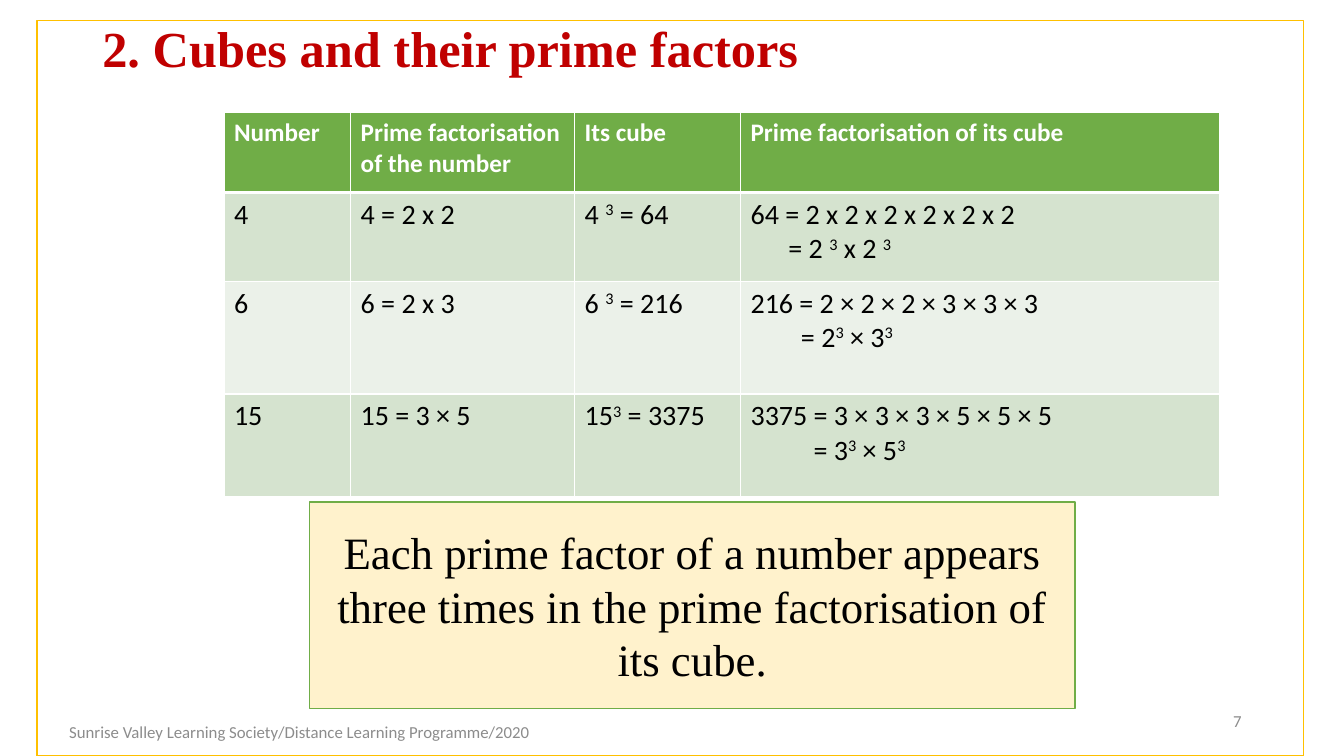
from pptx import Presentation
from pptx.dml.color import RGBColor
from pptx.enum.shapes import MSO_SHAPE
from pptx.enum.text import MSO_ANCHOR, PP_ALIGN
from pptx.oxml import parse_xml
from pptx.oxml.ns import nsdecls
from pptx.util import Pt

PROCESS = MSO_SHAPE.FLOWCHART_PROCESS
MIDDLE = MSO_ANCHOR.MIDDLE
LEFT, CENTER, RIGHT = PP_ALIGN.LEFT, PP_ALIGN.CENTER, PP_ALIGN.RIGHT

WHITE = RGBColor(0xFF, 0xFF, 0xFF)
BLACK = RGBColor(0, 0, 0)
RED = RGBColor(0xC0, 0, 0)
GOLD = RGBColor(0xFF, 0xC0, 0)
CREAM = RGBColor(0xFF, 0xF2, 0xCC)
GREEN = RGBColor(0x70, 0xAD, 0x47)
BANDS = RGBColor(0xD5, 0xE3, 0xCF), RGBColor(0xEB, 0xF1, 0xE9)
GRAY = RGBColor(0x8C, 0x8C, 0x8C)
SERIF, SANS = "Times New Roman", "Calibri"

# Content: "^" raises the next character, "\n" starts an indented line
TITLE = "2. Cubes and their prime factors"
HEADER = ("Number", "Prime factorisation of the number", "Its cube",
          "Prime factorisation of its cube")
ROWS = [
    ("4", "4 = 2 x 2", "4 ^3 = 64",
     "64 = 2 x 2 x 2 x 2 x 2 x 2\n= 2 ^3 x 2 ^3"),
    ("6", "6 = 2 x 3", "6 ^3 = 216",
     "216 = 2 × 2 × 2 × 3 × 3 × 3\n= 2^3 × 3^3"),
    ("15", "15 = 3 × 5", "15^3 = 3375",
     "3375 = 3 × 3 × 3 × 5 × 5 × 5\n= 3^3 × 5^3"),
]
INDENTS = (27, 36, 45)
COLUMN_WIDTHS = (90.5, 160, 118.5, 342)
ROW_HEIGHTS = (57, 63.5, 80.5, 73)
CONCLUSION = ("Each prime factor of a number appears three times "
              "in the prime factorisation of its cube.")
FOOTER = "Sunrise Valley Learning Society/Distance Learning Programme/2020"
PAGE_NUMBER = "7"

presentation = Presentation()
presentation.slide_width, presentation.slide_height = Pt(960), Pt(540)
slide = presentation.slides.add_slide(presentation.slide_layouts[6])


def style(paragraph, font_name, size, color, bold=False, align=LEFT):
    font = paragraph.font
    font.name, font.size, font.bold = font_name, Pt(size), bold
    font.color.rgb = color
    paragraph.alignment = align


def write(shape, text, *look):
    frame = shape.text_frame
    frame.word_wrap = True
    frame.vertical_anchor = MIDDLE
    frame.text = text
    style(frame.paragraphs[0], *look)


def add_box(box, fill, line):
    shape = slide.shapes.add_shape(PROCESS, *map(Pt, box))
    shape.shadow.inherit = False
    shape.fill.solid()
    shape.fill.fore_color.rgb = fill
    shape.line.color.rgb = line
    shape.line.width = Pt(1)
    return shape


def add_label(box, *text_and_look):
    write(slide.shapes.add_textbox(*map(Pt, box)), *text_and_look)


def add_powers(paragraph, text):
    first, *rest = text.split("^")
    paragraph.add_run().text = first
    for part in rest:
        power = paragraph.add_run()
        power.text = part[0]
        power._r.get_or_add_rPr().set("baseline", "30000")
        if part[1:]:
            paragraph.add_run().text = part[1:]


def format_cell(cell, fill, top, bottom):
    properties = cell._tc.get_or_add_tcPr()
    for side, width in zip("LRTB", (1, 1, top, bottom)):
        properties.append(parse_xml(
            f'<a:ln{side} {nsdecls("a")} w="{Pt(width)}"><a:solidFill>'
            f'<a:srgbClr val="{WHITE}"/></a:solidFill></a:ln{side}>'))
    cell.fill.solid()
    cell.fill.fore_color.rgb = fill


# Frame and title
add_box((26.5, 14.5, 904.5, 525.5), WHITE, GOLD)
add_label((66, 14, 828, 40), TITLE, SERIF, 36, RED, True)

# Table
table = slide.shapes.add_table(
    len(ROWS) + 1, len(HEADER), Pt(160), Pt(80.5),
    Pt(sum(COLUMN_WIDTHS)), Pt(sum(ROW_HEIGHTS))).table
table.horz_banding = False
for column, width in zip(table.columns, COLUMN_WIDTHS):
    column.width = Pt(width)
for row, height in zip(table.rows, ROW_HEIGHTS):
    row.height = Pt(height)

for c, heading in enumerate(HEADER):
    cell = table.cell(0, c)
    cell.text = heading
    style(cell.text_frame.paragraphs[0], SANS, 18, WHITE, True)
    format_cell(cell, GREEN, 1, 3)

for r, (texts, indent) in enumerate(zip(ROWS, INDENTS), 1):
    for c, text in enumerate(texts):
        cell = table.cell(r, c)
        frame = cell.text_frame
        for i, line in enumerate(text.split("\n")):
            paragraph = frame.add_paragraph() if i else frame.paragraphs[0]
            add_powers(paragraph, line)
            style(paragraph, SANS, 20, BLACK)
            if i:
                paragraph._p.get_or_add_pPr().set("marL", str(Pt(indent)))
        format_cell(cell, BANDS[(r - 1) % 2], 3 if r == 1 else 1, 1)

# Conclusion
conclusion = add_box((221, 358.5, 547, 147.5), CREAM, GREEN)
write(conclusion, CONCLUSION, SERIF, 32, BLACK, False, CENTER)

# Footer and page number
add_label((26.5, 506, 375, 34), FOOTER, SANS, 12, GRAY, False, CENTER)
add_label((678, 500.5, 216, 28.5), PAGE_NUMBER, SANS, 12, GRAY, False, RIGHT)

presentation.save("out.pptx")
